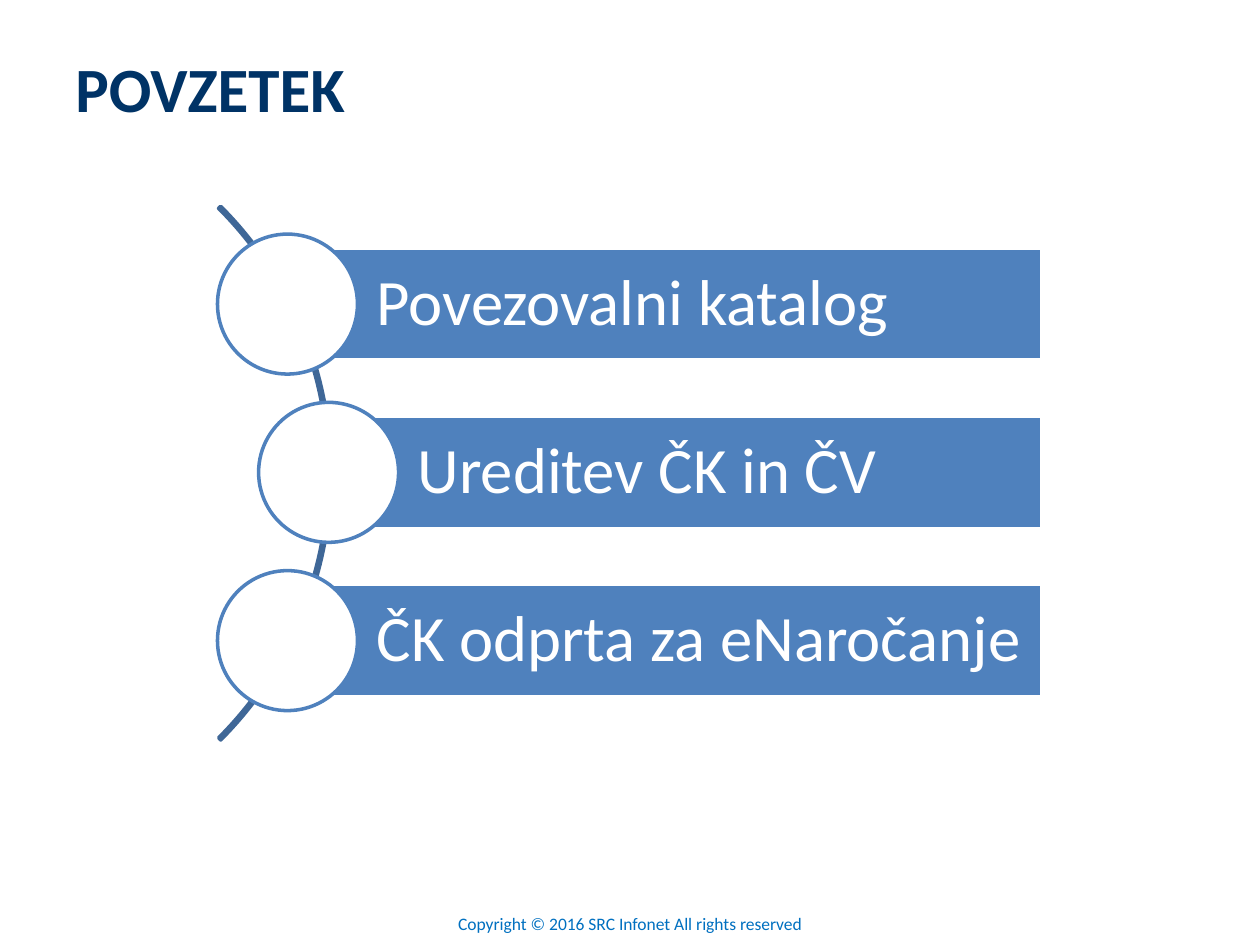
"""Build the summary slide: three bars with circles strung along an arc."""
from pptx import Presentation
from pptx.dml.color import RGBColor
from pptx.enum.shapes import MSO_SHAPE
from pptx.enum.text import MSO_ANCHOR, PP_ALIGN
from pptx.util import Pt

ARC, RECT, OVAL = MSO_SHAPE.BLOCK_ARC, MSO_SHAPE.RECTANGLE, MSO_SHAPE.OVAL
MIDDLE, BOTTOM = MSO_ANCHOR.MIDDLE, MSO_ANCHOR.BOTTOM
LEFT, CENTER = PP_ALIGN.LEFT, PP_ALIGN.CENTER

NAVY = RGBColor(0x00, 0x33, 0x66)
BLUE = RGBColor(0x4F, 0x81, 0xBD)
ARC_BLUE = RGBColor(0x3F, 0x67, 0x97)
FOOTER_BLUE = RGBColor(0x00, 0x70, 0xC0)
WHITE = RGBColor(0xFF, 0xFF, 0xFF)

BAR_TOP, BAR_STEP, BAR_HEIGHT, BAR_RIGHT = 141.8, 96.15, 64, 595.6
CIRCLE = 80
BARS = [
    ("Povezovalni katalog", 164.3),
    ("Ureditev ČK in ČV", 187.8),
    ("ČK odprta za eNaročanje", 164.3),
]


def add_shape(kind, x, y, w, h, fill, line):
    sp = s.shapes.add_shape(kind, Pt(x), Pt(y), Pt(w), Pt(h))
    sp.shadow.inherit = False
    if fill is None:
        sp.fill.background()
    else:
        sp.fill.solid()
        sp.fill.fore_color.rgb = fill
    sp.line.color.rgb = line
    sp.line.width = Pt(2)
    return sp


def set_text(sp, text, size, color, anchor, align, insets, bold=False):
    tf = sp.text_frame
    tf.word_wrap = True
    tf.vertical_anchor = anchor
    tf.margin_left, tf.margin_top, tf.margin_right, tf.margin_bottom = map(Pt, insets)
    p = tf.paragraphs[0]
    p.text = text
    p.alignment = align
    p.font.name = "Calibri"
    p.font.size = Pt(size)
    p.font.bold = bold
    p.font.color.rgb = color
    return p


prs = Presentation()
prs.slide_width, prs.slide_height = Pt(720), Pt(540)
s = prs.slides.add_slide(prs.slide_layouts[6])

footer = s.shapes.add_textbox(Pt(246), Pt(505.5), Pt(228), Pt(28.5))
set_text(footer, "Copyright © 2016 SRC Infonet All rights reserved", 10,
         FOOTER_BLUE, BOTTOM, CENTER, (0, 3.6, 0, 0))

title = s.shapes.add_textbox(Pt(36), Pt(21.6), Pt(648), Pt(57))
set_text(title, "POVZETEK", 36, NAVY, MIDDLE, LEFT, (7.2, 3.6, 7.2, 3.6), bold=True)

arc = add_shape(ARC, -242, 54.7, 431.3, 431.3, None, ARC_BLUE)
for i, value in enumerate((189, 27, 0.004)):
    arc.adjustments[i] = value

for i, (text, x) in enumerate(BARS):
    y = BAR_TOP + i * BAR_STEP
    bar = add_shape(RECT, x, y, BAR_RIGHT - x, BAR_HEIGHT, BLUE, WHITE)
    p = set_text(bar, text, 37, WHITE, MIDDLE, LEFT, (51, 7.2, 7.2, 7.2))
    p.line_spacing = 0.9
    add_shape(OVAL, x - CIRCLE / 2, y + (BAR_HEIGHT - CIRCLE) / 2,
              CIRCLE, CIRCLE, WHITE, BLUE)

prs.save("out.pptx")
